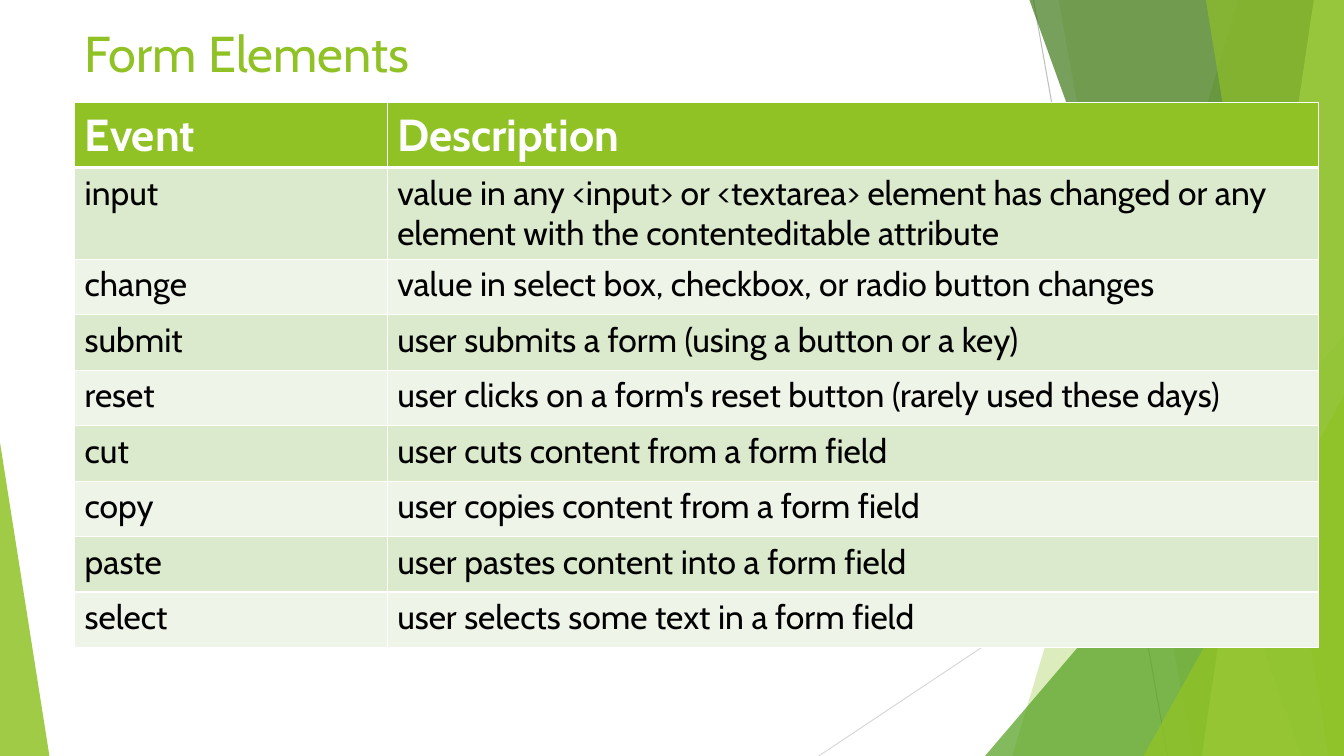
import pptx
import pptx.dml.color
import pptx.enum.shapes
import pptx.enum.text
import pptx.oxml.ns
import pptx.util
import lxml.etree
from dataclasses import dataclass

UNIT = 9144  # EMU in one px, 100 px to the inch


@dataclass(frozen=True)
class Theme:
    face: str = "Cabin"
    lime: str = "90C226"
    leaf: str = "54A021"
    moss: str = "3F7819"
    pale: str = "C0E474"
    white: str = "FFFFFF"
    black: str = "000000"
    bands: tuple = ("DBE9CD", "EEF4E8")
    rules: tuple = ("BFBFBF", "D9D9D9")
    title: int = 36
    head: int = 32
    body: int = 24


LOOK = Theme()

ROWS = [
    ("Event", "Description"),
    ("input", "value in any <input> or <textarea> element has changed or any "
              "element with the contenteditable attribute"),
    ("change", "value in select box, checkbox, or radio button changes"),
    ("submit", "user submits a form (using a button or a key)"),
    ("reset", "user clicks on a form's reset button (rarely used these days)"),
    ("cut", "user cuts content from a form field"),
    ("copy", "user copies content from a form field"),
    ("paste", "user pastes content into a form field"),
    ("select", "user selects some text in a form field"),
]


def px(*nums):
    return [pptx.util.Emu(num * UNIT) for num in nums]


def rgb(hue):
    return pptx.dml.color.RGBColor.from_string(hue)


def put(item, vals):
    for name, val in vals.items():
        setattr(item, name, val)


def add(node, tag, **vals):
    return lxml.etree.SubElement(node, pptx.oxml.ns.qn(tag), **vals)


def write(frame, text, size, hue, bold=False):
    run = frame.paragraphs[0].add_run()
    put(run, {"text": text})
    put(run.font, {"name": LOOK.face, "size": pptx.util.Pt(size), "bold": bold})
    put(run.font.color, {"rgb": rgb(hue)})


def paint(shape, hue, alpha):
    """Flat see-through fill, with alpha in percent."""
    shape.shadow.inherit = False
    shape.line.fill.background()
    shape.fill.solid()
    put(shape.fill.fore_color, {"rgb": rgb(hue)})
    tone = next(shape.fill._xPr.iter(pptx.oxml.ns.qn("a:srgbClr")))
    add(tone, "a:alpha", val=str(alpha * 1000))


def wedge(slide, box, lean, hue, alpha):
    kind = pptx.enum.shapes.MSO_SHAPE.ISOSCELES_TRIANGLE
    shape = slide.shapes.add_shape(kind, *px(*box))
    shape.adjustments[0] = lean
    paint(shape, hue, alpha)


def pane(slide, box, top, foot, hue, alpha):
    """Full-height panel from a slanted left edge to the box's right side."""
    left, y, wide, high = box
    pen = slide.shapes.build_freeform(*px(left + top, y), scale=1.0)
    pen.add_line_segments([px(left + wide, y), px(left + wide, y + high),
                           px(left + foot, y + high)], close=True)
    paint(pen.convert_to_shape(), hue, alpha)


def rule(slide, start, end, hue):
    kind = pptx.enum.shapes.MSO_CONNECTOR.STRAIGHT
    line = slide.shapes.add_connector(kind, *px(*start, *end))
    put(line.line, {"width": pptx.util.Pt(0.75)})
    put(line.line.color, {"rgb": rgb(hue)})
    add(line._element.spPr, "a:effectLst")


def facets(slide, box):
    left, top, wide, high = box
    # Thin rules behind the panels
    rule(slide, (left + 213, top), (left + 346, top + high), LOOK.rules[0])
    rule(slide, (left + wide, top + 403), (left, top + high), LOOK.rules[1])

    def corner(x, y, hue, alpha):
        wedge(slide, (left + x, top + y, wide - x, high - y), 1, hue, alpha)

    # Overlapping panels, back to front
    pane(slide, box, 416, 192, LOOK.lime, 30)
    pane(slide, box, 238, 371, LOOK.lime, 20)
    corner(165, 333, LOOK.leaf, 72)
    pane(slide, box, 209, 479, LOOK.moss, 70)
    pane(slide, box, 491, 380, LOOK.pale, 70)
    pane(slide, box, 384, 506, LOOK.lime, 65)
    corner(322, 393, LOOK.lime, 80)


def heading(slide, box, text):
    shape = slide.shapes.title
    put(shape, dict(zip(("left", "top", "width", "height"), px(*box))))
    frame = shape.text_frame
    put(frame, {"word_wrap": True,
                "auto_size": pptx.enum.text.MSO_AUTO_SIZE.NONE,
                "vertical_anchor": pptx.enum.text.MSO_ANCHOR.TOP})
    put(frame.paragraphs[0], {"alignment": pptx.enum.text.PP_ALIGN.LEFT})
    write(frame, text, LOOK.title, LOOK.lime)


def edge(cell, top, foot):
    """White borders; top and foot are widths in points."""
    prop = cell._tc.get_or_add_tcPr()
    for side, width in (("L", 1), ("R", 1), ("T", top), ("B", foot)):
        line = add(prop, "a:ln" + side, w=str(pptx.util.Pt(width)))
        add(add(line, "a:solidFill"), "a:srgbClr", val=LOOK.white)


def events(slide, box, rows):
    left, top, wide, high = box
    grid = slide.shapes.add_table(len(rows), 2, *px(*box)).table
    put(grid, {"first_row": True, "horz_banding": False})
    first = wide // 4 + 2
    for col, width in zip(grid.columns, px(first, wide - first)):
        put(col, {"width": width})
    # The header and the two-line row are taller; the rest share what is left
    tall = [64, 91]
    rest = (high - sum(tall)) // (len(rows) - len(tall))
    for i, words in enumerate(rows):
        put(grid.rows[i], {"height": px(tall[i] if i < len(tall) else rest)[0]})
        for j, word in enumerate(words):
            cell = grid.cell(i, j)
            edge(cell, 3 if i == 1 else 1, 3 if i == 0 else 1)
            cell.fill.solid()
            hue = LOOK.bands[(i - 1) % 2] if i else LOOK.lime
            put(cell.fill.fore_color, {"rgb": rgb(hue)})
            if i:
                write(cell.text_frame, word, LOOK.body, LOOK.black)
            else:
                write(cell.text_frame, word, LOOK.head, LOOK.white, True)


def main():
    deck = pptx.Presentation()
    put(deck, dict(zip(("slide_width", "slide_height"), px(1333, 750))))
    slide = deck.slides.add_slide(deck.slide_layouts[5])
    facets(slide, (812, 0, 521, 750))
    wedge(slide, (0, 439, 49, 311), 0, LOOK.lime, 85)
    heading(slide, (74, 17, 940, 85), "Form Elements")
    events(slide, (74, 102, 1234, 540), ROWS)
    deck.save("out.pptx")


if __name__ == "__main__":
    main()
